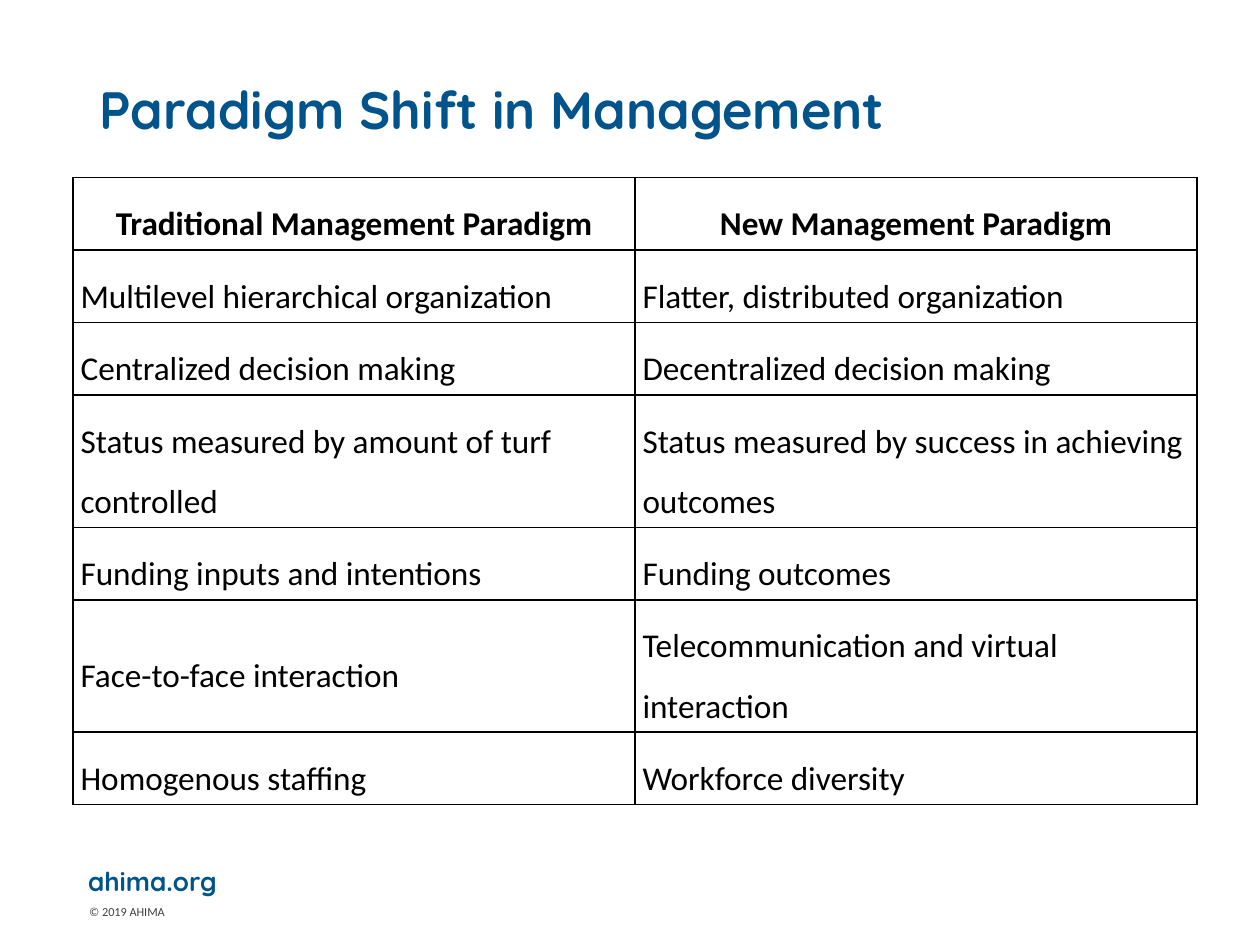
import pptx
import pptx.dml.color
import pptx.enum.text
import pptx.oxml
import pptx.oxml.ns
import pptx.util
from pptx.util import Inches

COLORS = {"blue": "00548B", "gray": "404040", "black": "000000", "white": "FFFFFF"}
ROWS = [
    ("Traditional Management Paradigm", "New Management Paradigm"),
    ("Multilevel hierarchical organization", "Flatter, distributed organization"),
    ("Centralized decision making", "Decentralized decision making"),
    ("Status measured by amount of turf controlled",
     "Status measured by success in achieving outcomes"),
    ("Funding inputs and intentions", "Funding outcomes"),
    ("Face-to-face interaction", "Telecommunication and virtual interaction"),
    ("Homogenous staffing", "Workforce diversity"),
]
TWO_LINE_ROWS = (3, 5)


def rgb(color):
    return pptx.dml.color.RGBColor.from_string(COLORS[color])


class SlideBuilder:
    heading_font = "Quicksand"
    body_font = "Calibri"
    table_size = 19

    def __init__(self, slide):
        self.slide = slide

    def style(self, paragraph, name, size, color, bold=False):
        font = paragraph.font
        font.name, font.size, font.bold = name, pptx.util.Pt(size), bold
        font.color.rgb = rgb(color)

    def text(self, content, left, top, width, height, name, size, color, bold=False):
        shape = self.slide.shapes.add_textbox(
            Inches(left), Inches(top), Inches(width), Inches(height))
        frame = shape.text_frame
        frame.word_wrap = True
        paragraph = frame.paragraphs[0]
        paragraph.text = content
        self.style(paragraph, name, size, color, bold)
        return frame

    def title(self, content):
        frame = self.text(content, 0.69, 0.4, 8.62, 1.45, self.heading_font, 30, "blue", True)
        frame.vertical_anchor = pptx.enum.text.MSO_ANCHOR.MIDDLE
        frame.margin_bottom = Inches(0.52)
        frame.paragraphs[0].line_spacing = 0.9

    def borders(self, cell):
        """Draw 1 pt black lines on all four sides; they must precede the fill."""
        properties = cell._tc.get_or_add_tcPr()
        for side in ("lnL", "lnR", "lnT", "lnB"):
            properties.append(pptx.oxml.parse_xml(
                f'<a:{side} {pptx.oxml.ns.nsdecls("a")} w="12700"><a:solidFill>'
                f'<a:srgbClr val="{COLORS["black"]}"/></a:solidFill></a:{side}>'))

    def cell(self, cell, content, is_header):
        self.borders(cell)
        cell.fill.solid()
        cell.fill.fore_color.rgb = rgb("white")
        cell.vertical_anchor = pptx.enum.text.MSO_ANCHOR.MIDDLE
        cell.margin_left = cell.margin_right = Inches(0.06)
        cell.margin_top = cell.margin_bottom = Inches(0.05)
        paragraph = cell.text_frame.paragraphs[0]
        paragraph.text = content
        paragraph.line_spacing = 1.5
        paragraph.space_after = pptx.util.Pt(6)
        if is_header:
            paragraph.alignment = pptx.enum.text.PP_ALIGN.CENTER
        self.style(paragraph, self.body_font, self.table_size, "black", is_header)

    def table(self, rows, left, top, width):
        heights = [1.05 if index in TWO_LINE_ROWS else 0.57 for index in range(len(rows))]
        table = self.slide.shapes.add_table(
            len(rows), len(rows[0]), Inches(left), Inches(top),
            Inches(width), Inches(sum(heights))).table
        for row_index, (contents, height) in enumerate(zip(rows, heights)):
            table.rows[row_index].height = Inches(height)
            for column_index, content in enumerate(contents):
                self.cell(table.cell(row_index, column_index), content, row_index == 0)


def main():
    presentation = pptx.Presentation()
    presentation.slide_width, presentation.slide_height = Inches(10), Inches(7.5)
    builder = SlideBuilder(presentation.slides.add_slide(presentation.slide_layouts[6]))
    builder.text("© 2019 AHIMA", 0.61, 7.13, 5.12, 0.22, builder.body_font, 7, "gray")
    builder.text("ahima.org", 0.6, 6.82, 1.85, 0.35, builder.heading_font, 15, "blue", True)
    builder.table(ROWS, 0.58, 1.41, 8.92)
    builder.title("Paradigm Shift in Management")
    presentation.save("out.pptx")


if __name__ == "__main__":
    main()
